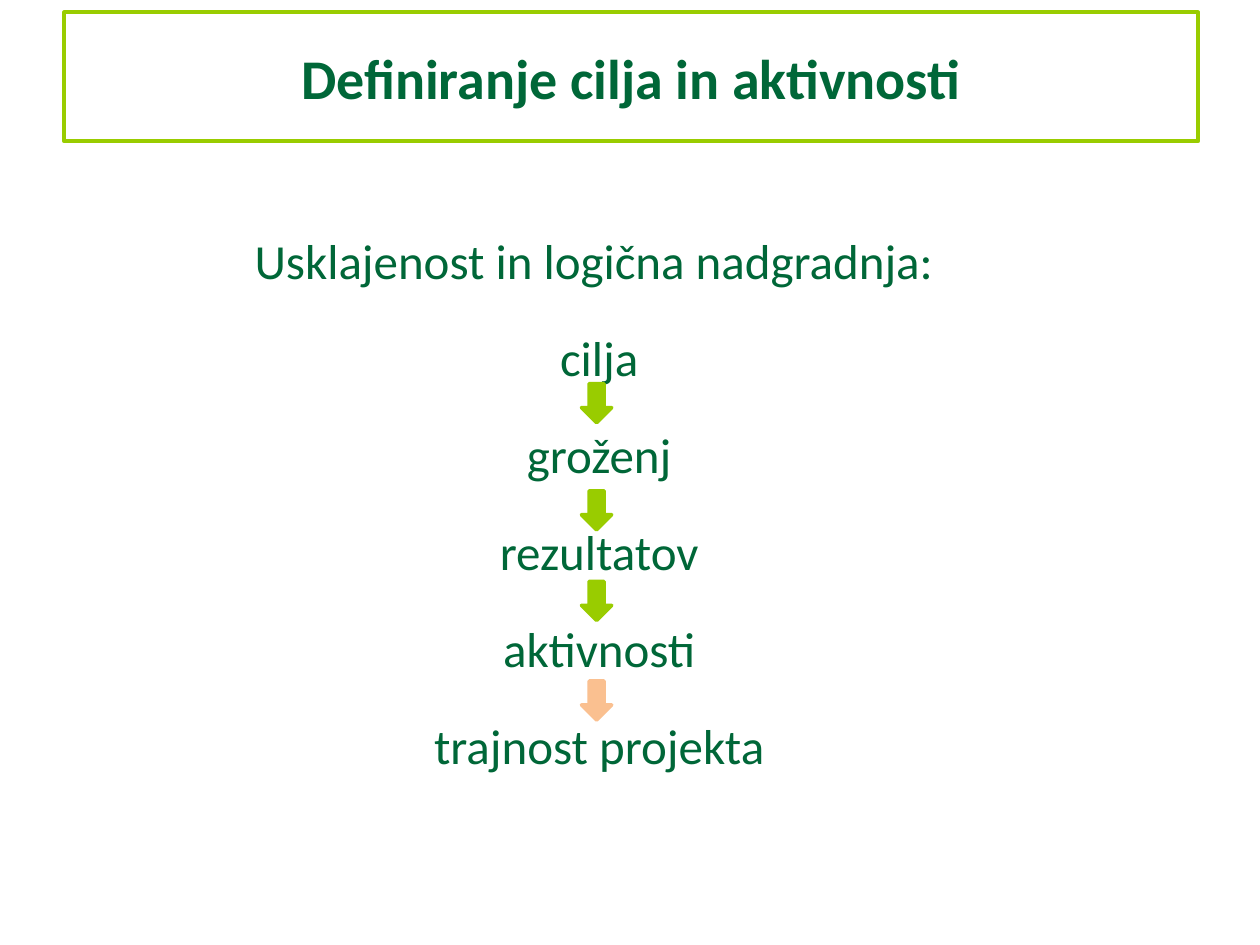
from dataclasses import dataclass
from lxml.etree import SubElement
from pptx import Presentation
from pptx.dml.color import RGBColor
from pptx.enum.shapes import MSO_SHAPE
from pptx.enum.text import MSO_ANCHOR, MSO_AUTO_SIZE, PP_ALIGN
from pptx.oxml.ns import qn
from pptx.util import Pt

COLORS = {"text": "006738", "lime": "99CC00", "peach": "FAC090"}
LEAD = "Usklajenost in logična nadgradnja: "
STEPS = ["cilja", " groženj ", "rezultatov", "aktivnosti", "trajnost projekta"]


@dataclass
class Arrow:
    mid: float
    color: str = "lime"


ARROWS = [Arrow(230.4), Arrow(291.6), Arrow(343.4), Arrow(400.3, "peach")]
ARROW_X, ARROW_LONG, ARROW_WIDE = 340.9, 22.3, 17.3


def tint(name: str) -> RGBColor:
    return RGBColor.from_string(COLORS[name])


def place(shape, left: float, top: float, width: float, height: float) -> None:
    shape.left, shape.top = Pt(left), Pt(top)
    shape.width, shape.height = Pt(width), Pt(height)


def write(para, text: str, *, size: float, bold: bool = False,
          space: float = 0, line: float = 1.0) -> None:
    """Fill a centred paragraph that has no bullet."""
    props = para._p.get_or_add_pPr()
    props.set("marL", "0")
    props.set("indent", "0")
    SubElement(props, qn("a:buNone"))
    para.alignment = PP_ALIGN.CENTER
    para.space_before = Pt(space)
    para.line_spacing = line
    run = para.add_run()
    run.text = text
    run.font.name = "Calibri"
    run.font.size = Pt(size)
    run.font.bold = bold
    run.font.color.rgb = tint("text")


def draw_title(shape) -> None:
    place(shape, 36.7, 20.9, 648, 46.1)
    shape.line.color.rgb = tint("lime")
    shape.line.width = Pt(2.25)
    frame = shape.text_frame
    frame.auto_size = MSO_AUTO_SIZE.SHAPE_TO_FIT_TEXT
    frame.vertical_anchor = MSO_ANCHOR.MIDDLE
    frame.margin_top = frame.margin_bottom = Pt(10.4)
    write(frame.paragraphs[0], "Definiranje cilja in aktivnosti", size=32, bold=True)


def draw_steps(shape) -> None:
    place(shape, 38.9, 128.2, 607, 345.6)
    frame = shape.text_frame
    frame.auto_size = MSO_AUTO_SIZE.NONE
    write(frame.paragraphs[0], LEAD, size=28)
    for step in STEPS:
        write(frame.add_paragraph(), step, size=28, space=5, line=1.5)


def draw_arrow(shapes, arrow: Arrow) -> None:
    shape = shapes.add_shape(
        MSO_SHAPE.RIGHT_ARROW,
        Pt(ARROW_X - ARROW_LONG / 2), Pt(arrow.mid - ARROW_WIDE / 2),
        Pt(ARROW_LONG), Pt(ARROW_WIDE))
    shape.rotation = 90
    shape.shadow.inherit = False
    shape.fill.solid()
    shape.fill.fore_color.rgb = tint(arrow.color)
    shape.line.color.rgb = tint(arrow.color)
    shape.line.width = Pt(2)


def main() -> None:
    deck = Presentation()
    deck.slide_width, deck.slide_height = Pt(720), Pt(540)
    slide = deck.slides.add_slide(deck.slide_layouts[1])
    draw_title(slide.shapes.title)
    draw_steps(slide.placeholders[1])
    for arrow in ARROWS:
        draw_arrow(slide.shapes, arrow)
    deck.save("out.pptx")


if __name__ == "__main__":
    main()
